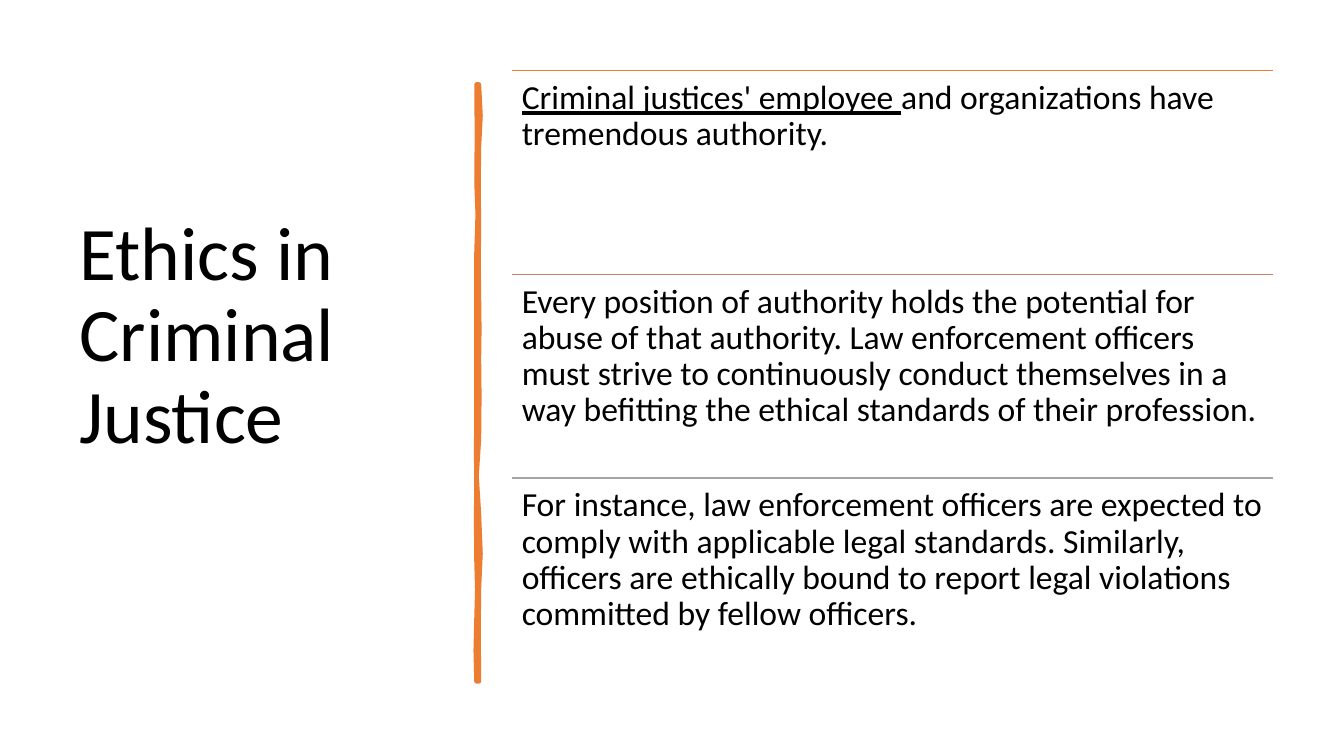
"""Builds the slide on ethics in criminal justice."""
from lxml import etree
from pptx import Presentation
from pptx.dml.color import RGBColor
from pptx.enum.shapes import MSO_CONNECTOR
from pptx.enum.text import MSO_ANCHOR, MSO_AUTO_SIZE, PP_ALIGN
from pptx.oxml.ns import qn
from pptx.util import Cm, Pt

STRAIGHT = MSO_CONNECTOR.STRAIGHT
LEFT = PP_ALIGN.LEFT
TOP, MIDDLE = MSO_ANCHOR.TOP, MSO_ANCHOR.MIDDLE
NO_FIT = MSO_AUTO_SIZE.NONE
TITLE_ONLY = 5
FONT = "Calibri"
COLOURS = {"text": "000000", "orange": "ED7D31", "rust": "C48170", "grey": "A5A5A5"}

ROW_LEFT, ROW_TOP, ROW_WIDTH, ROW_HEIGHT = 12.9, 1.78, 19.18, 5.13
ROWS = [
    ("orange", [("Criminal justices' employee ", True),
                ("and organizations have tremendous authority.", False)]),
    ("rust", [("Every position of authority holds the potential for abuse of that "
               "authority. Law enforcement officers must strive to continuously conduct "
               "themselves in a way befitting the ethical standards of their "
               "profession.", False)]),
    ("grey", [("For instance, law enforcement officers are expected to comply with "
               "applicable legal standards. Similarly, officers are ethically bound to "
               "report legal violations committed by fellow officers.", False)]),
]
STROKE_RIGHT = [
    (12.07, 2.13), (12.11, 2.91), (12.07, 3.71), (12.06, 4.68), (12.07, 5.74),
    (12.06, 6.6), (12.07, 7.47), (12.08, 8.3), (12.07, 9.04), (12.08, 10),
    (12.07, 11.07), (12.01, 12), (12.07, 12.95), (12.11, 13.95), (12.07, 14.83),
    (12.06, 15.9), (12.07, 17.17),
]
STROKE_LEFT = [
    (12.01, 17.17), (11.99, 16.4), (12.01, 15.57), (12.03, 14.86), (12.01, 14.15),
    (12, 13.1), (12.01, 12.12), (12, 11.3), (12.01, 10.54), (12.01, 6.35),
    (12.04, 5.4), (12.01, 4.6), (12.02, 3.4), (12.01, 2.13),
]


def colour(name):
    """Return the named colour."""
    return RGBColor.from_string(COLOURS[name])


def apply(target, values):
    """Set each attribute in values on target."""
    for name, value in values.items():
        setattr(target, name, value)


def write_text(frame, spans, size, values):
    """Write one paragraph of (text, underline) spans into a formatted frame."""
    apply(frame, {"word_wrap": True, "auto_size": NO_FIT, **values})
    para = frame.paragraphs[0]
    apply(para, {"alignment": LEFT, "line_spacing": 0.9})
    for text, underline in spans:
        span = para.add_run()
        span.text = text
        apply(span.font, {"name": FONT, "size": Pt(size), "underline": underline})
        span.font.color.rgb = colour("text")


def set_title(page, text):
    """Place and fill the title, raised by a deep bottom inset."""
    title = page.shapes.title
    apply(title, {"left": Cm(1.75), "top": Cm(1.78),
                  "width": Cm(9.5), "height": Cm(15.52)})
    write_text(title.text_frame, [(text, False)], 54,
               {"vertical_anchor": MIDDLE, "margin_bottom": Cm(2.21)})


def add_brush_stroke(page):
    """Draw the wavy vertical divider."""
    points = [(Cm(x), Cm(y)) for x, y in STROKE_RIGHT + STROKE_LEFT]
    builder = page.shapes.build_freeform(*points[0])
    builder.add_line_segments(points[1:], close=True)
    stroke = builder.convert_to_shape()
    stroke.shadow.inherit = False
    stroke.fill.solid()
    stroke.fill.fore_color.rgb = colour("orange")
    stroke.line.color.rgb = colour("orange")
    stroke.line.width = Pt(3.25)


def add_row(group, top, line_colour, spans):
    """Add one ruled row of text."""
    rule = group.shapes.add_connector(STRAIGHT, Cm(ROW_LEFT), Cm(top),
                                      Cm(ROW_LEFT + ROW_WIDTH), Cm(top))
    rule.line.color.rgb = colour(line_colour)
    rule.line.width = Pt(1)
    etree.SubElement(rule._element.spPr, qn("a:effectLst"))
    box = group.shapes.add_textbox(Cm(ROW_LEFT), Cm(top), Cm(ROW_WIDTH), Cm(ROW_HEIGHT))
    sides = ("left", "top", "right", "bottom")
    insets = {f"margin_{side}": Cm(0.25) for side in sides}
    write_text(box.text_frame, spans, 24, {"vertical_anchor": TOP, **insets})


def main():
    """Build and save the deck."""
    deck = Presentation()
    apply(deck, {"slide_width": Cm(33.87), "slide_height": Cm(19.05)})
    page = deck.slides.add_slide(deck.slide_layouts[TITLE_ONLY])
    set_title(page, "Ethics in Criminal Justice")
    add_brush_stroke(page)
    group = page.shapes.add_group_shape()
    for index, (line_colour, spans) in enumerate(ROWS):
        add_row(group, ROW_TOP + index * ROW_HEIGHT, line_colour, spans)
    deck.save("out.pptx")


if __name__ == "__main__":
    main()
